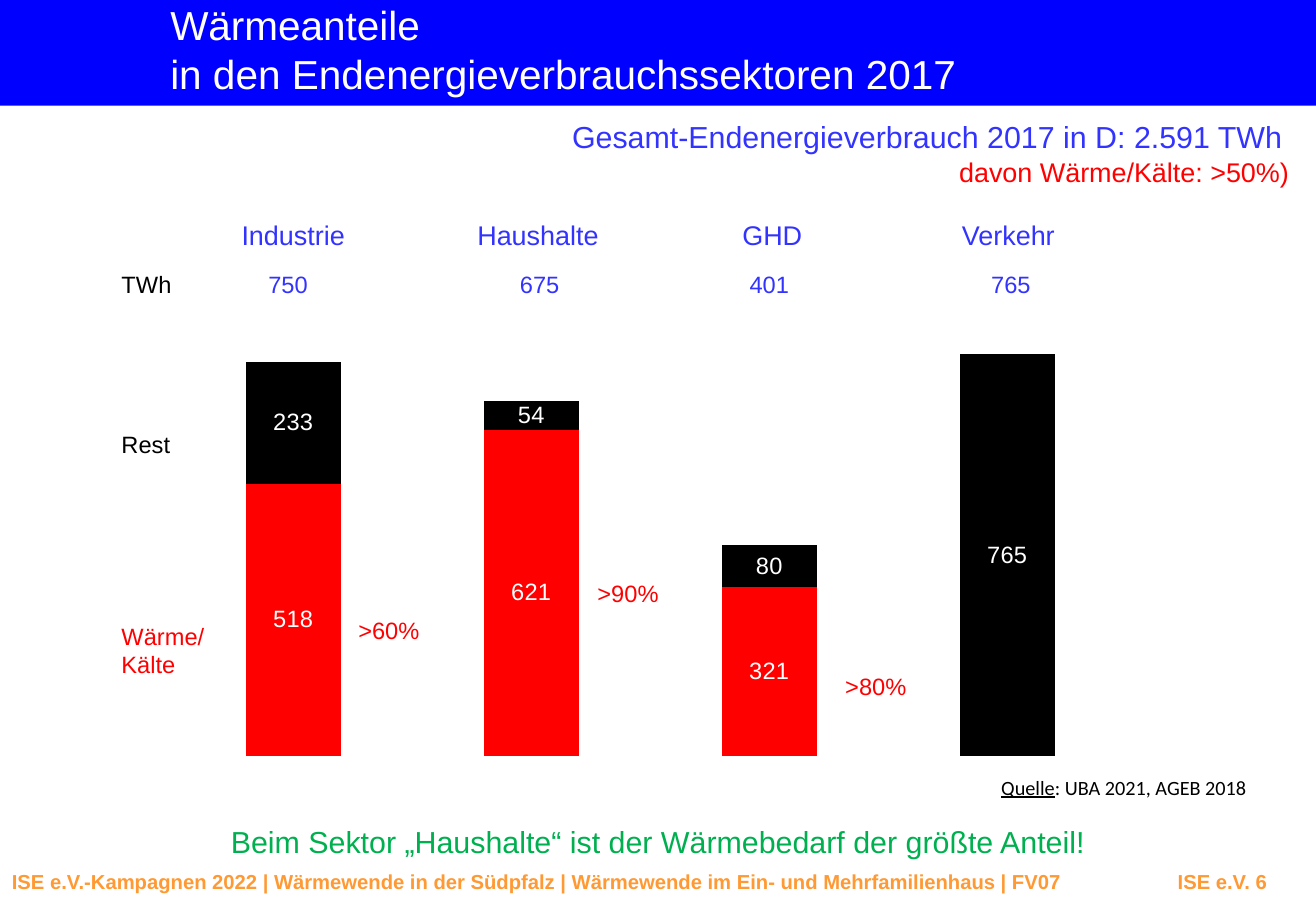
from dataclasses import dataclass
from typing import Optional

from lxml import etree
from pptx import Presentation
from pptx import util as u
from pptx.chart.data import CategoryChartData
from pptx.dml.color import RGBColor
from pptx.enum import chart as ch, shapes, text
from pptx.oxml import parse_xml
from pptx.oxml.ns import nsdecls, qn

BLUE, RED, BLACK, WHITE = "3333FF", "FF0000", "000000", "FFFFFF"
BANNER, GREEN, ORANGE = "0000FF", "00B050", "FF9933"
WIDTH, HEIGHT = 27.51, 19.05
LEFT, CENTER, RIGHT = text.PP_ALIGN.LEFT, text.PP_ALIGN.CENTER, text.PP_ALIGN.RIGHT


@dataclass
class Label:
    words: str
    x: float
    y: float
    w: float
    h: float
    size: int
    color: str
    align: text.PP_ALIGN = LEFT
    wrap: bool = False
    inset: Optional[float] = None
    bold: bool = False


@dataclass
class Sector:
    name: str
    name_x: float
    name_w: float
    total: int
    total_x: float
    heat: Optional[int]
    rest: int


SECTORS = [
    Sector("Industrie", 4.8, 2.69, 750, 5.36, 518, 233),
    Sector("Haushalte", 9.73, 3.07, 675, 10.62, 621, 54),
    Sector("GHD", 15.27, 1.78, 401, 15.42, 321, 80),
    Sector("Verkehr", 19.86, 2.46, 765, 20.47, None, 765),
]
SHARES = [(">60%", 7.24, 12.75), (">90%", 12.24, 11.99), (">80%", 17.42, 13.92)]


def rgb(value: str) -> RGBColor:
    return RGBColor.from_string(value)


def set_font(font, size: float, color: str, **formats) -> None:
    values = {"name": "Arial", "size": u.Pt(size), **formats}
    for key, value in values.items():
        setattr(font, key, value)
    font.color.rgb = rgb(color)


def add_label(slide, label: Label):
    sp = slide.shapes.add_textbox(*map(u.Cm, (label.x, label.y, label.w, label.h)))
    tf = sp.text_frame
    tf.word_wrap = label.wrap
    if label.inset is not None:
        for side in ("left", "top", "right", "bottom"):
            setattr(tf, f"margin_{side}", u.Cm(label.inset))
    p = tf.paragraphs[0]
    p.text = label.words
    p.alignment = label.align
    for r in p.runs:
        set_font(r.font, label.size, label.color, bold=label.bold)
    return sp


def add_bars(slide) -> None:
    data = CategoryChartData(number_format="0")
    data.categories = [s.name for s in SECTORS]
    data.add_series("Wärme/Kälte", [s.heat for s in SECTORS])
    data.add_series("Rest", [s.rest for s in SECTORS])
    frame = slide.shapes.add_chart(ch.XL_CHART_TYPE.COLUMN_STACKED,
                                   *map(u.Cm, (3.23, 5.72, 20.73, 10.29)), data)
    chart = frame.chart
    set_font(chart.font, 10, BLACK)
    chart.has_legend = chart.has_title = False
    chart.category_axis.visible = False
    axis = chart.value_axis
    for key, value in {"visible": False, "has_major_gridlines": False,
                       "minimum_scale": 0, "maximum_scale": 900}.items():
        setattr(axis, key, value)

    plot = chart.plots[0]
    plot.gap_width, plot.overlap, plot.vary_by_categories = 150, 100, False
    for series, color in zip(plot.series, (RED, BLACK)):
        series.format.fill.solid()
        series.format.fill.fore_color.rgb = rgb(color)
        labels = series.data_labels
        labels.show_value = True
        labels.number_format, labels.number_format_is_linked = "0", False
        set_font(labels.font, 14, WHITE)

    # Fixed plot area inside the chart frame
    area = chart._chartSpace.chart.plotArea
    for old in area.findall(qn("c:layout")):
        area.remove(old)
    places = {"x": 0.02, "y": 0.02, "w": 0.96, "h": 0.96}
    modes = "".join(f'<c:{k}Mode val="edge"/>' for k in "xy")
    sizes = "".join(f'<c:{k} val="{v}"/>' for k, v in places.items())
    area.insert(0, parse_xml(
        f'<c:layout {nsdecls("c")}><c:manualLayout><c:layoutTarget val="inner"/>'
        f'{modes}{sizes}</c:manualLayout></c:layout>'))


def add_footer(slide) -> None:
    sp = add_label(slide, Label(
        "ISE e.V.-Kampagnen 2022 | Wärmewende in der Südpfalz | "
        "Wärmewende im Ein- und Mehrfamilienhaus | FV07\tISE e.V. 6",
        0, 18.06, WIDTH, 0.76, 12, ORANGE, wrap=True, bold=True))
    props = sp.text_frame.paragraphs[0]._p.get_or_add_pPr()
    tabs = etree.SubElement(props, qn("a:tabLst"))
    etree.SubElement(tabs, qn("a:tab"), pos=str(u.Cm(24.37)), algn="l")


def add_source(slide) -> None:
    sp = slide.shapes.add_textbox(*map(u.Cm, (20.68, 16.08, 6.55, 0.76)))
    sp.text_frame.word_wrap = True
    p = sp.text_frame.paragraphs[0]
    for words, underline in (("Quelle", True), (": UBA 2021, AGEB 2018", False)):
        r = p.add_run()
        r.text = words
        set_font(r.font, 12, BLACK, name="Calibri", underline=underline)


def main() -> None:
    prs = Presentation()
    prs.slide_width, prs.slide_height = u.Cm(WIDTH), u.Cm(HEIGHT)
    slide = prs.slides.add_slide(prs.slide_layouts[6])

    # Title banner
    banner = slide.shapes.add_shape(shapes.MSO_SHAPE.RECTANGLE, 0, 0,
                                    u.Cm(WIDTH), u.Cm(2.21))
    banner.shadow.inherit = False
    banner.fill.solid()
    banner.fill.fore_color.rgb = rgb(BANNER)
    banner.line.fill.background()

    # Stacked bars
    add_bars(slide)

    # Headings, row names and conclusion
    labels = [
        Label("Wärmeanteile\vin den Endenergieverbrauchssektoren 2017",
              3.56, 0, 23.11, 2.06, 24, WHITE, wrap=True, inset=0),
        Label("Gesamt-Endenergieverbrauch 2017 in D: 2.591 TWh",
              11.71, 2.34, 15.49, 1.02, 18, BLUE),
        Label("davon Wärme/Kälte: >50%)", 19.71, 3.12, 7.49, 0.94, 16, RED, RIGHT),
        Label("TWh", 2.29, 5.51, 1.57, 0.86, 14, BLACK),
        Label("Rest", 2.29, 8.86, 1.55, 0.86, 14, BLACK),
        Label("Wärme/\vKälte", 2.29, 12.88, 2.26, 1.45, 14, RED),
        Label("Beim Sektor „Haushalte“ ist der Wärmebedarf der größte Anteil!",
              0, 17.04, WIDTH, 1.12, 18, GREEN, CENTER, True, 0.18),
    ]

    # Sector names, totals and heat shares
    for s in SECTORS:
        labels.append(Label(s.name, s.name_x, 4.45, s.name_w, 0.94, 16, BLUE))
        labels.append(Label(str(s.total), s.total_x, 5.51, 1.35, 0.86, 14, BLUE))
    labels += [Label(share, x, y, 1.8, 0.86, 14, RED) for share, x, y in SHARES]
    for label in labels:
        add_label(slide, label)

    # Source and footer
    add_source(slide)
    add_footer(slide)
    prs.save("out.pptx")


if __name__ == "__main__":
    main()
